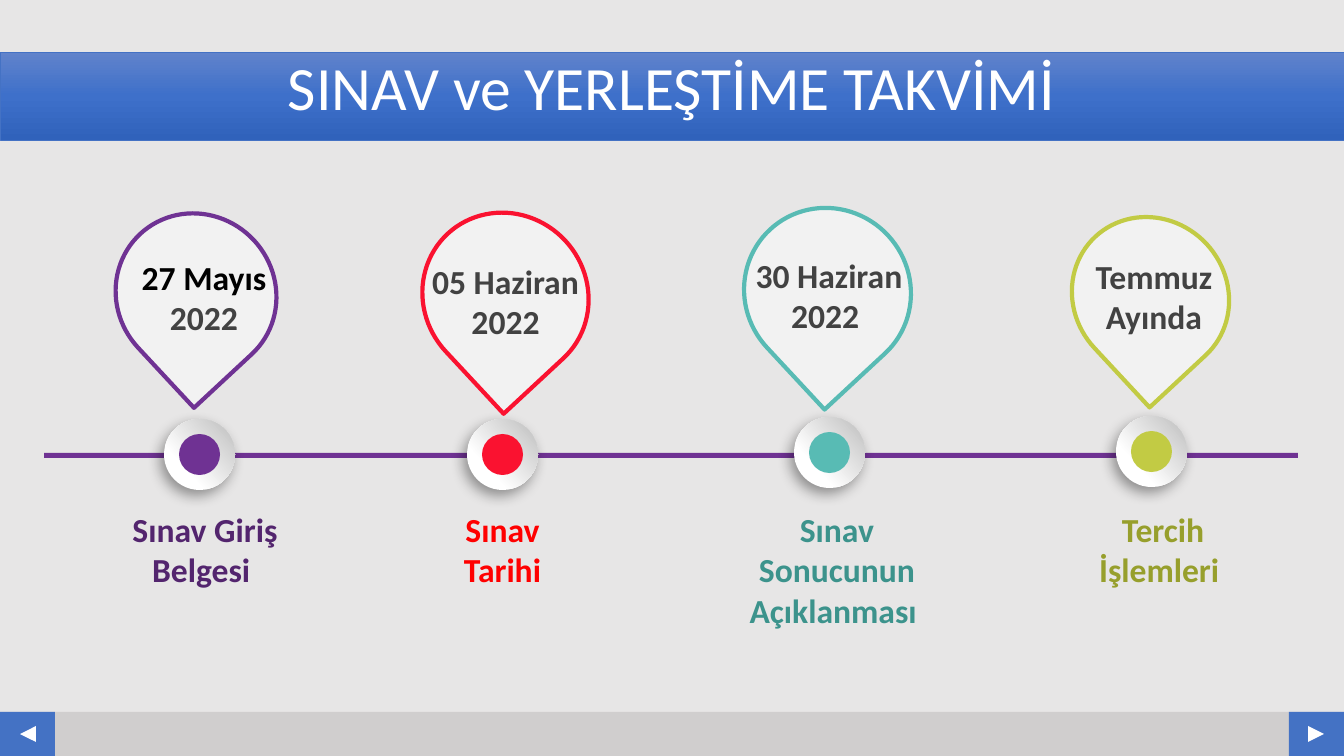
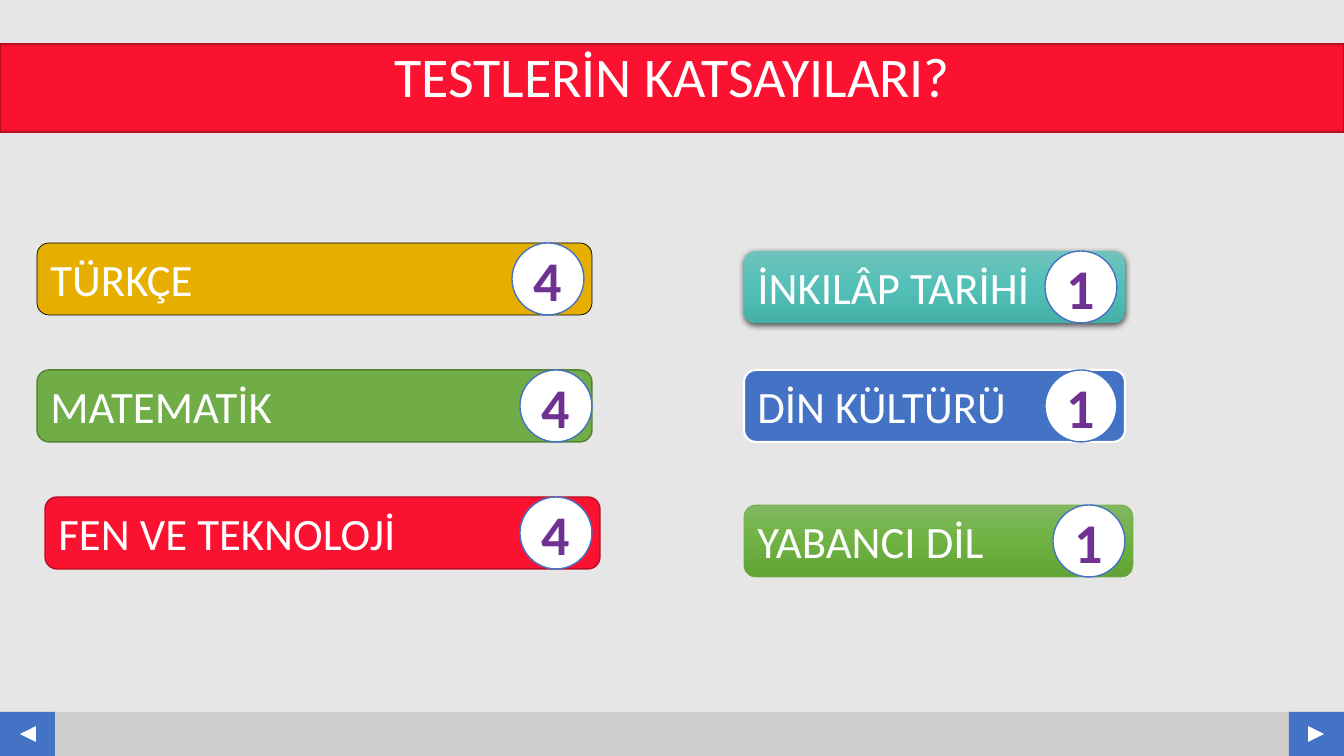
import lxml.etree
import pptx
import pptx.dml.color
import pptx.enum.shapes
import pptx.enum.text
import pptx.oxml.ns
import pptx.util

SCALE = 914400 / 100.8
SLIDE_WIDTH, SLIDE_HEIGHT = 1344, 756
FONT_NAME = "Calibri"

RGB = pptx.dml.color.RGBColor
SHAPES = pptx.enum.shapes.MSO_SHAPE
ALIGN = pptx.enum.text.PP_ALIGN
ANCHOR = pptx.enum.text.MSO_ANCHOR

BACKGROUND = RGB(0xE7, 0xE6, 0xE6)
FOOTER_GREY = RGB(0xD0, 0xCE, 0xCE)
WHITE = RGB(0xFF, 0xFF, 0xFF)
BLACK = RGB(0x00, 0x00, 0x00)
BLUE = RGB(0x44, 0x72, 0xC4)
PURPLE = RGB(0x6F, 0x32, 0x93)
DARK_PURPLE = RGB(0x53, 0x25, 0x6E)
RED = RGB(0xFA, 0x12, 0x30)
DARK_RED = RGB(0xB9, 0x0D, 0x24)
PURE_RED = RGB(0xFF, 0x00, 0x00)
TEAL = RGB(0x58, 0xBB, 0xB4)
DARK_TEAL = RGB(0x3C, 0x93, 0x8C)
LIME = RGB(0xC2, 0xCB, 0x44)
DARK_LIME = RGB(0x97, 0x9F, 0x2C)
GOLD = RGB(0xE6, 0xAF, 0x00)
GREEN = RGB(0x70, 0xAD, 0x47)
DARK_GREEN = RGB(0x53, 0x80, 0x35)
DROP_GREY = RGB(0xF2, 0xF2, 0xF2)
TEXT_GREY = RGB(0x42, 0x42, 0x42)
KNOB_GREY = RGB(0xBF, 0xBF, 0xBF)

DOWN = 270
BLUE_GRADIENT = (DOWN, [(0, RGB(0x61, 0x83, 0xCB)), (50, RGB(0x3E, 0x70, 0xCA)),
                        (100, RGB(0x30, 0x62, 0xBB))])
TEAL_GRADIENT = (DOWN, [(0, RGB(0x6F, 0xC3, 0xBC)), (50, RGB(0x53, 0xC0, 0xB8)),
                        (100, RGB(0x44, 0xB0, 0xA8))])
GREEN_GRADIENT = (DOWN, [(0, RGB(0x81, 0xB8, 0x61)), (50, RGB(0x6F, 0xB2, 0x42)),
                         (100, RGB(0x62, 0xA3, 0x36))])
KNOB_GRADIENT = (42, [(29, WHITE), (98, KNOB_GREY)])

KNOB_SHADOW = {"opacity": 39, "blur": 10, "distance": 5, "angle": 123}
BAR_SHADOW = {"opacity": 63, "blur": 4.5, "distance": 1.5, "angle": 90}

TITLE_FONT = {"color": WHITE}
DATE_FONT = {"size": 24, "bold": True, "color": TEXT_GREY}
BAR_FONT = {"size": 32, "color": WHITE}
BADGE_FONT = {"size": 40, "bold": True, "color": PURPLE}

MILESTONES = [
    {"box": (117, 212, 158, 164), "color": PURPLE,
     "date": (14, 40, 146), "lines": [("27 Mayıs", BLACK), ("2022", TEXT_GREY)],
     "knob": (47, 207), "label": (-8, 292, 192),
     "caption": "Sınav Giriş Belgesi ", "caption_color": DARK_PURPLE},
    {"box": (424, 211, 163, 170), "color": RED,
     "date": (-3, 45, 169), "lines": [("05 Haziran", TEXT_GREY), ("2022", TEXT_GREY)],
     "knob": (43, 208), "label": (-6, 293, 169),
     "caption": "Sınav Tarihi", "caption_color": PURE_RED},
    {"box": (745, 207, 165, 169), "color": TEAL,
     "date": (0, 43, 168), "lines": [("30 Haziran", TEXT_GREY), ("2022 ", TEXT_GREY)],
     "knob": (49, 210), "label": (-17, 297, 218),
     "caption": "Sınav Sonucunun Açıklanması ", "caption_color": DARK_TEAL},
    {"box": (1074, 215, 153, 162), "color": LIME,
     "date": (11, 36, 138), "lines": [("Temmuz", TEXT_GREY), ("Ayında", TEXT_GREY)],
     "knob": (42, 201), "label": (11, 289, 156),
     "caption": "Tercih İşlemleri ", "caption_color": DARK_LIME},
]

COEFFICIENTS = [
    {"box": (37, 243, 555, 72), "subject": "TÜRKÇE", "weight": "4",
     "fill": GOLD, "line": (BLACK, 0.5)},
    {"box": (37, 370, 555, 72), "subject": "MATEMATİK", "weight": "4",
     "fill": GREEN, "line": (DARK_GREEN, 1), "inset": 0},
    {"box": (45, 497, 555, 72), "subject": "FEN VE TEKNOLOJİ", "weight": "4",
     "fill": RED, "line": (DARK_RED, 1)},
    {"box": (744, 251, 381, 72), "subject": "İNKILÂP TARİHİ", "weight": "1",
     "fill": TEAL_GRADIENT, "shadow": BAR_SHADOW},
    {"box": (744, 370, 381, 72), "subject": "DİN KÜLTÜRÜ", "weight": "1",
     "fill": BLUE, "line": (WHITE, 1.5)},
    {"box": (744, 505, 389, 72), "subject": "YABANCI DİL", "weight": "1",
     "fill": GREEN_GRADIENT, "line": (GREEN, 0.5)},
]


def px(length):
    """Turn a length in px into EMU."""
    return pptx.util.Emu(round(length * SCALE))


def apply_format(target, values):
    """Set every attribute named in a dict of format values."""
    for name, value in values.items():
        setattr(target, name, value)


def add_element(parent, tag, **attributes):
    """Append a drawing element with the given attributes."""
    element = lxml.etree.SubElement(parent, pptx.oxml.ns.qn(tag))
    for name, value in attributes.items():
        element.set(name, str(value))
    return element


def paint_gradient(shape, angle, stops):
    """Fill a shape with a linear gradient, its angle counted anticlockwise."""
    shape.fill.gradient()
    shape.fill.gradient_angle = angle
    stop_list = shape._element.spPr.find(".//" + pptx.oxml.ns.qn("a:gsLst"))
    stop_list.clear()
    for position, color in stops:
        stop = add_element(stop_list, "a:gs", pos=position * 1000)
        add_element(stop, "a:srgbClr", val=color)


def cast_shadow(shape, opacity, blur, distance, angle):
    """Give a shape a black outer shadow."""
    effects = shape._element.spPr.find(pptx.oxml.ns.qn("a:effectLst"))
    shadow = add_element(effects, "a:outerShdw", blurRad=pptx.util.Pt(blur),
                         dist=pptx.util.Pt(distance), dir=angle * 60000,
                         algn="ctr", rotWithShape=0)
    color = add_element(shadow, "a:srgbClr", val=BLACK)
    add_element(color, "a:alpha", val=opacity * 1000)


def draw_shape(slide, kind, box, fill, line=None, rotation=0, shadow=None):
    """Add a preset shape with a plain or gradient fill."""
    shape = slide.shapes.add_shape(kind, *map(px, box))
    shape.rotation = rotation
    shape.shadow.inherit = False
    if isinstance(fill, RGB):
        shape.fill.solid()
        shape.fill.fore_color.rgb = fill
    else:
        paint_gradient(shape, *fill)
    if line:
        shape.line.color.rgb, shape.line.width = line[0], pptx.util.Pt(line[1])
    else:
        shape.line.fill.background()
    if shadow:
        cast_shadow(shape, **shadow)
    return shape


def write_line(paragraph, text, size, color, bold=False, **paragraph_format):
    """Write one styled run into a paragraph."""
    apply_format(paragraph, paragraph_format)
    run = paragraph.add_run()
    run.text = text
    apply_format(run.font, {"name": FONT_NAME, "size": pptx.util.Pt(size), "bold": bold})
    run.font.color.rgb = color


def write_box(slide, box, lines, wrap=True):
    """Add a text box with one centred paragraph for each line."""
    frame = slide.shapes.add_textbox(*map(px, box)).text_frame
    frame.word_wrap = wrap
    for index, (text, color) in enumerate(lines):
        paragraph = frame.add_paragraph() if index else frame.paragraphs[0]
        write_line(paragraph, text, **{**DATE_FONT, "color": color}, alignment=ALIGN.CENTER)


def draw_footer(slide, box):
    """Draw the footer strip with an arrow button at each end."""
    left, top, width, height = box
    button = 55
    draw_shape(slide, SHAPES.RECTANGLE, box, FOOTER_GREY)
    for button_left, arrow_left, rotation in (
            (left, left + 20, 270), (left + width - button, left + width - 36, 90)):
        draw_shape(slide, SHAPES.RECTANGLE, (button_left, top, button, height), BLUE)
        draw_shape(slide, SHAPES.ISOSCELES_TRIANGLE, (arrow_left, top + 14, 16, 16),
                   WHITE, rotation=rotation)


def draw_title(slide, box, text, size, fill, line):
    """Draw the full-width title band."""
    band = draw_shape(slide, SHAPES.RECTANGLE, box, fill, line)
    band.text_frame.vertical_anchor = ANCHOR.TOP
    write_line(band.text_frame.paragraphs[0], text, size, **TITLE_FONT,
               alignment=ALIGN.CENTER, line_spacing=0.9)


def draw_milestone(slide, box, color, date, lines, knob, label, caption, caption_color):
    """Draw a date drop with its knob on the line and its caption below."""
    left, top = box[:2]
    knob_left, knob_top = left + knob[0], top + knob[1]
    draw_shape(slide, SHAPES.OVAL, (knob_left, knob_top, 71, 71), KNOB_GRADIENT,
               shadow=KNOB_SHADOW)
    draw_shape(slide, SHAPES.OVAL, (knob_left + 15, knob_top + 15, 41, 41), color)
    draw_shape(slide, SHAPES.TEAR, box, DROP_GREY, (color, 3), rotation=137.1)
    write_box(slide, (left + date[0], top + date[1], date[2], 92), lines, wrap=False)
    write_box(slide, (left + label[0], top + label[1], label[2], 92),
              [(caption, caption_color)])


def draw_coefficient(slide, box, subject, weight, fill, line=None, shadow=None, inset=8):
    """Draw a subject bar with its round weight badge at the right."""
    left, top, width, height = box
    bar = draw_shape(slide, SHAPES.FLOWCHART_ALTERNATE_PROCESS, box, fill, line,
                     shadow=shadow)
    badge_box = (left + width - height - inset, top, height, height)
    badge = draw_shape(slide, SHAPES.OVAL, badge_box, WHITE, (BLUE, 1))
    for shape, text, font, alignment in ((bar, subject, BAR_FONT, ALIGN.LEFT),
                                         (badge, weight, BADGE_FONT, ALIGN.CENTER)):
        shape.text_frame.vertical_anchor = ANCHOR.MIDDLE
        write_line(shape.text_frame.paragraphs[0], text, **font, alignment=alignment)


def add_slide(presentation, title_top, **title):
    """Add a blank slide with background, footer and title band."""
    slide = presentation.slides.add_slide(presentation.slide_layouts[6])
    slide.background.fill.solid()
    slide.background.fill.fore_color.rgb = BACKGROUND
    draw_footer(slide, (0, 712, SLIDE_WIDTH, 44))
    draw_title(slide, (0, title_top, SLIDE_WIDTH, 88), **title)
    return slide


def build_calendar(presentation):
    """Build the exam calendar slide."""
    slide = add_slide(presentation, 52, text="SINAV ve YERLEŞTİME TAKVİMİ", size=44,
                      fill=BLUE_GRADIENT, line=(BLUE, 0.5))
    draw_shape(slide, SHAPES.RECTANGLE, (44, 453, 1254, 5), PURPLE)
    for milestone in MILESTONES:
        draw_milestone(slide, **milestone)


def build_coefficients(presentation):
    """Build the test coefficients slide."""
    slide = add_slide(presentation, 44, text="TESTLERİN KATSAYILARI?", size=40,
                      fill=RED, line=(DARK_RED, 1))
    for coefficient in COEFFICIENTS:
        draw_coefficient(slide, **coefficient)


def main():
    """Build and save the presentation."""
    presentation = pptx.Presentation()
    apply_format(presentation, {"slide_width": px(SLIDE_WIDTH),
                                "slide_height": px(SLIDE_HEIGHT)})
    build_calendar(presentation)
    build_coefficients(presentation)
    presentation.save("out.pptx")


if __name__ == "__main__":
    main()
